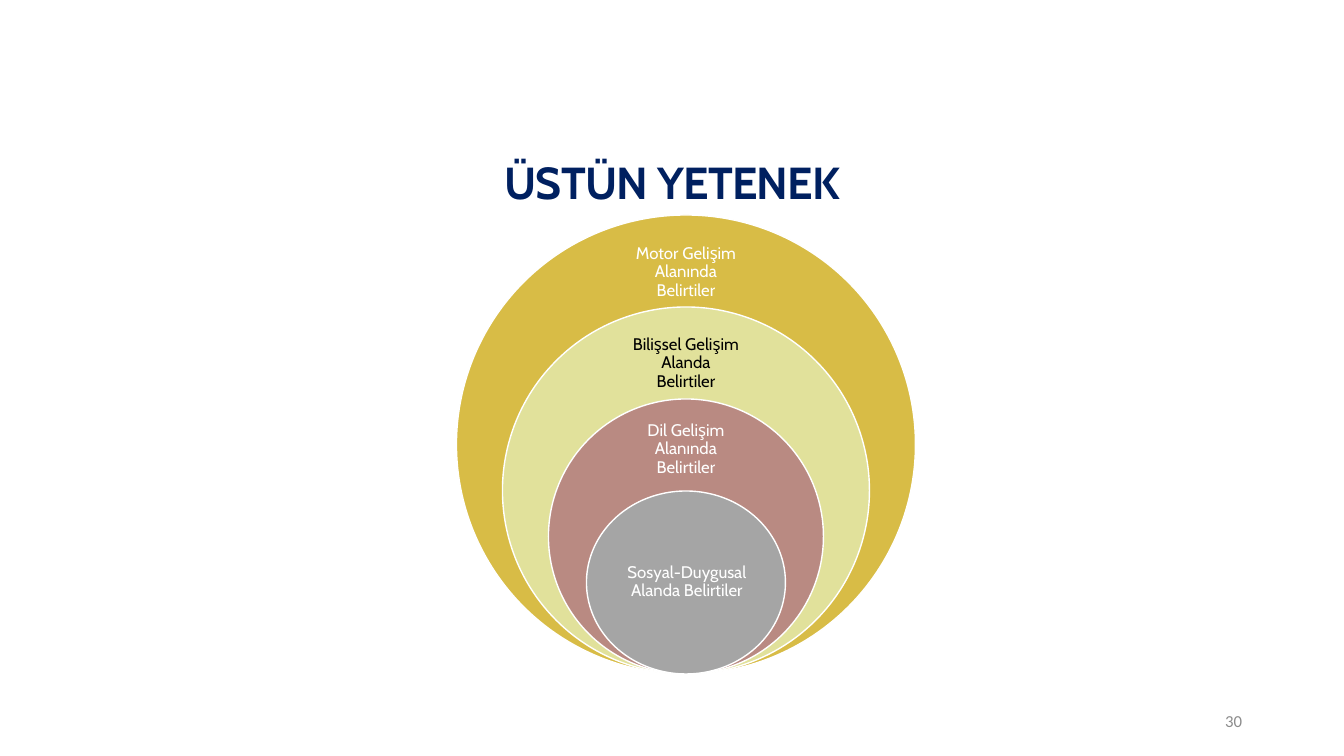
import pptx
import pptx.dml.color
import pptx.enum.shapes
import pptx.enum.text
import pptx.util

TITLE = "ÜSTÜN YETENEK"
PAGE = "30"
RINGS = [
    {"text": "Motor Gelişim Alanında Belirtiler", "fill": "D8BC46", "color": "FFFFFF",
     "width": 459, "label": (622, 238, 128, 69)},
    {"text": "Bilişsel Gelişim Alanda Belirtiler", "fill": "E1E19B", "color": "000000",
     "width": 367, "label": (622, 330, 128, 67)},
    {"text": "Dil Gelişim Alanında Belirtiler", "fill": "B98A82", "color": "FFFFFF",
     "width": 275, "label": (622, 419, 128, 61)},
    {"text": "Sosyal-Duygusal Alanda Belirtiler", "fill": "A5A5A5", "color": "FFFFFF",
     "width": 199, "label": (617, 536, 140, 92)},
]
CENTER, BOTTOM = 686, 674
OUTER, STEP = 459, 92
ALIGN = pptx.enum.text.PP_ALIGN


def px(n):
    return pptx.util.Emu(round(n * 914400 / 100.8))


def rgb(value):
    return pptx.dml.color.RGBColor.from_string(value)


def write(sp, text, color, align, spacing=1.0, inset=None, **font):
    tf = sp.text_frame
    tf.word_wrap = True
    tf.vertical_anchor = pptx.enum.text.MSO_ANCHOR.MIDDLE
    if inset is not None:
        for side in ("left", "top", "right", "bottom"):
            setattr(tf, f"margin_{side}", px(inset))
    p = tf.paragraphs[0]
    p.alignment = align
    p.line_spacing = spacing
    r = p.add_run()
    r.text = text
    r.font.color.rgb = rgb(color)
    for name, value in font.items():
        setattr(r.font, name, value)
    return r


def place(sp, box):
    for name, value in zip(("left", "top", "width", "height"), box):
        setattr(sp, name, px(value))


prs = pptx.Presentation()
prs.slide_width, prs.slide_height = px(1344), px(756)
s = prs.slides.add_slide(prs.slide_layouts[5])

title = s.shapes.title
place(title, (93, 135, 1159, 99))
r = write(title, TITLE, "002060", ALIGN.CENTER, 0.9,
          name="Cabin", size=pptx.util.Pt(32), bold=True)
r.font._element.set("spc", "-50")

for i, ring in enumerate(RINGS):
    width, height = ring["width"], OUTER - i * STEP
    box = (CENTER - width / 2, BOTTOM - height, width, height)
    sp = s.shapes.add_shape(pptx.enum.shapes.MSO_SHAPE.OVAL, *map(px, box))
    sp.shadow.inherit = False
    sp.fill.solid()
    sp.fill.fore_color.rgb = rgb(ring["fill"])
    sp.line.color.rgb = rgb("FFFFFF")
    sp.line.width = pptx.util.Pt(1)
    label = s.shapes.add_textbox(*map(px, ring["label"]))
    write(label, ring["text"], ring["color"], ALIGN.CENTER, 0.9, 9,
          name="Cabin", size=pptx.util.Pt(12))

number = s.shapes.add_textbox(*map(px, (950, 701, 302, 40)))
write(number, PAGE, "8C8C8C", ALIGN.RIGHT, name="Calibri", size=pptx.util.Pt(12))

prs.save("out.pptx")
